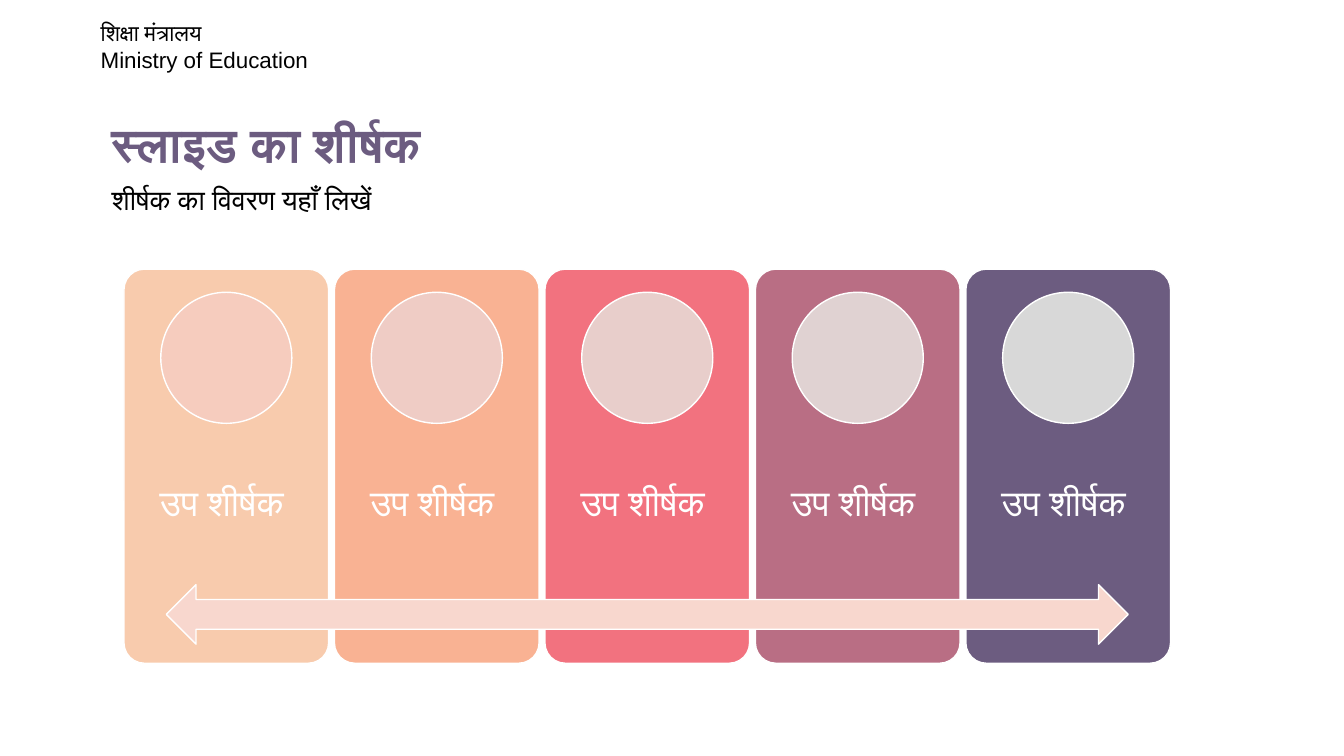
from dataclasses import dataclass

from pptx import Presentation
from pptx.dml.color import RGBColor
from pptx.enum.shapes import MSO_SHAPE
from pptx.enum.text import MSO_ANCHOR, PP_ALIGN
from pptx.shapes.autoshape import Shape
from pptx.slide import Slide
from pptx.util import Inches, Pt


@dataclass(frozen=True)
class Theme:
    black: str = "000000"
    white: str = "FFFFFF"
    purple: str = "6C5C80"
    arrow: str = "F8D7CE"
    header_size: int = 16
    title_size: int = 34
    subtitle_size: int = 20
    label_size: int = 26
    outline_width: int = 1
    heading_font: str = "Arial"
    body_font: str = "Calibri"


THEME = Theme()


@dataclass(frozen=True)
class Area:
    left: float
    top: float
    width: float
    height: float

    def lengths(self) -> list[Inches]:
        return [Inches(n) for n in (self.left, self.top, self.width, self.height)]


@dataclass(frozen=True)
class TextStyle:
    size: int
    font: str
    color: str
    bold: bool = False
    align: PP_ALIGN = PP_ALIGN.LEFT
    line_spacing: float = 0.9


@dataclass(frozen=True)
class Column:
    label: str
    panel_color: str
    circle_color: str


HEADER = TextStyle(THEME.header_size, THEME.heading_font, THEME.black, line_spacing=1.0)
TITLE = TextStyle(THEME.title_size, THEME.heading_font, THEME.purple, bold=True)
SUBTITLE = TextStyle(THEME.subtitle_size, THEME.body_font, THEME.black)
LABEL = TextStyle(THEME.label_size, THEME.body_font, THEME.white, align=PP_ALIGN.CENTER)

COLUMN_LABEL = "उप शीर्षक "
COLUMNS = [
    Column(COLUMN_LABEL, "F8CBAD", "F6CCBE"),
    Column(COLUMN_LABEL, "F9B293", "EFCCC5"),
    Column(COLUMN_LABEL, "F2727F", "E8CECB"),
    Column(COLUMN_LABEL, "B96E84", "E0D2D2"),
    Column(COLUMN_LABEL, THEME.purple, "D8D8D8"),
]
FIRST_LEFT, LAST_LEFT = 1.23, 9.58
PITCH = (LAST_LEFT - FIRST_LEFT) / (len(COLUMNS) - 1)
PANEL_WIDTH = 2.03
CIRCLE_SIZE = 1.3
LABEL_INSET = 0.2


def add_text(page: Slide, area: Area, lines: list[str], style: TextStyle,
             inset: float | None = None, anchor: MSO_ANCHOR = MSO_ANCHOR.TOP) -> None:
    frame = page.shapes.add_textbox(*area.lengths()).text_frame
    frame_format = {"word_wrap": True, "vertical_anchor": anchor}
    if inset is not None:
        for side in ("left", "top", "right", "bottom"):
            frame_format[f"margin_{side}"] = Inches(inset)
    for name, value in frame_format.items():
        setattr(frame, name, value)

    font_format = {"size": Pt(style.size), "name": style.font, "bold": style.bold}
    for index, line in enumerate(lines):
        para = frame.add_paragraph() if index else frame.paragraphs[0]
        para.alignment = style.align
        para.line_spacing = style.line_spacing
        span = para.add_run()
        span.text = line
        for name, value in font_format.items():
            setattr(span.font, name, value)
        span.font.color.rgb = RGBColor.from_string(style.color)


def add_outlined_shape(page: Slide, kind: MSO_SHAPE, area: Area, color: str) -> Shape:
    shape = page.shapes.add_shape(kind, *area.lengths())
    shape.shadow.inherit = False
    shape.fill.solid()
    shape.fill.fore_color.rgb = RGBColor.from_string(color)
    shape.line.color.rgb = RGBColor.from_string(THEME.white)
    shape.line.width = Pt(THEME.outline_width)
    return shape


def add_column(page: Slide, left: float, column: Column) -> None:
    panel = add_outlined_shape(page, MSO_SHAPE.ROUNDED_RECTANGLE,
                               Area(left, 2.67, PANEL_WIDTH, 3.91), column.panel_color)
    panel.adjustments[0] = 0.1
    add_text(page, Area(left, 4.23, PANEL_WIDTH, 1.56), [column.label], LABEL,
             LABEL_INSET, MSO_ANCHOR.MIDDLE)
    circle_left = left + (PANEL_WIDTH - CIRCLE_SIZE) / 2
    add_outlined_shape(page, MSO_SHAPE.OVAL,
                       Area(circle_left, 2.9, CIRCLE_SIZE, CIRCLE_SIZE), column.circle_color)


def main() -> None:
    deck = Presentation()
    deck.slide_width, deck.slide_height = Inches(13.33), Inches(7.5)
    page = deck.slides.add_slide(deck.slide_layouts[6])

    add_text(page, Area(0.9, 0.14, 5.19, 0.64),
             ["शिक्षा मंत्रालय", "Ministry of Education"], HEADER)
    add_text(page, Area(1.01, 1.16, 6.13, 0.47), ["स्लाइड का शीर्षक"], TITLE)
    add_text(page, Area(1.01, 1.8, 7.19, 0.37), ["शीर्षक का विवरण यहाँ लिखें"], SUBTITLE)

    for index, column in enumerate(COLUMNS):
        add_column(page, FIRST_LEFT + index * PITCH, column)
    add_outlined_shape(page, MSO_SHAPE.LEFT_RIGHT_ARROW,
                       Area(1.65, 5.8, 9.54, 0.59), THEME.arrow)

    deck.save("out.pptx")


if __name__ == "__main__":
    main()
